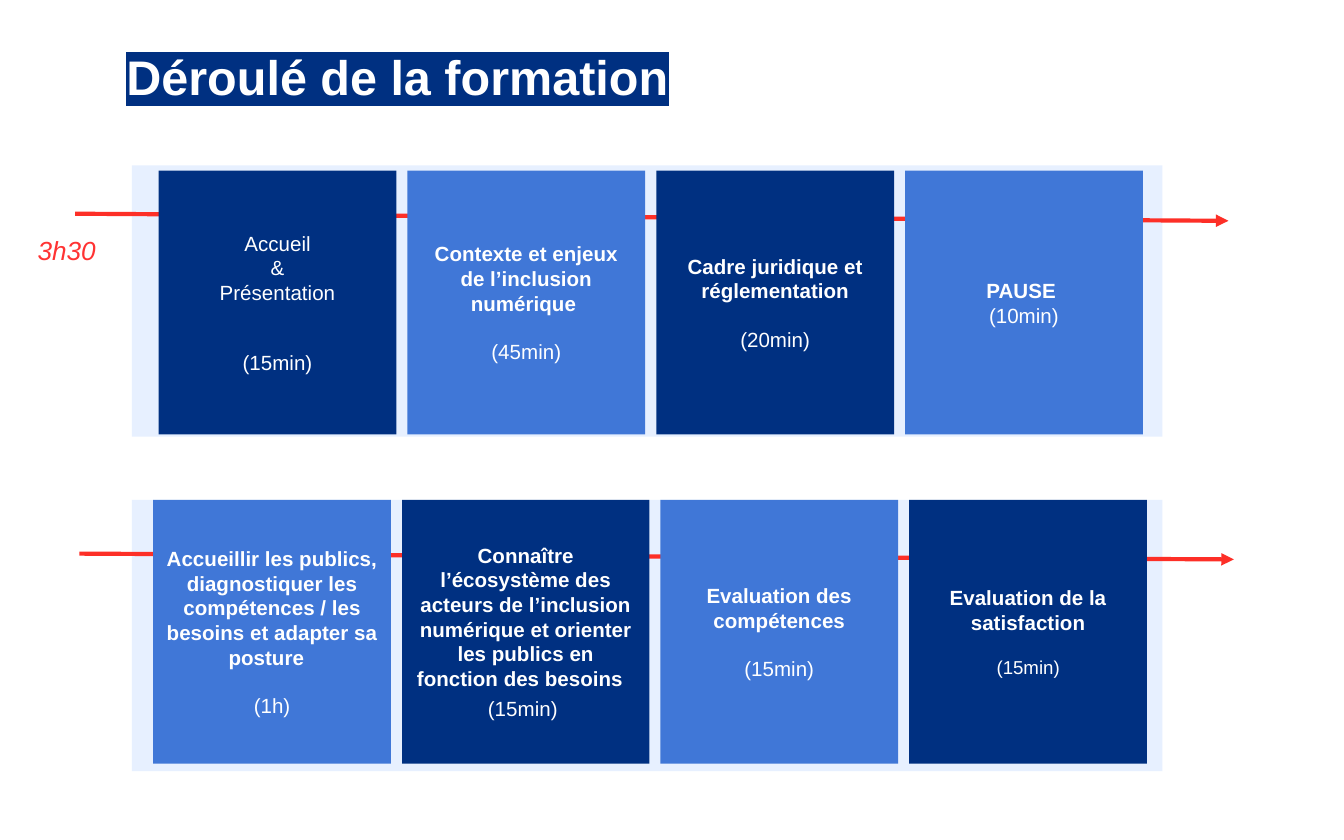
from lxml.etree import SubElement
from pptx import Presentation
from pptx.dml.color import RGBColor as RGB
from pptx.enum.shapes import MSO_CONNECTOR as CONN, MSO_SHAPE as SHAPE
from pptx.enum.text import MSO_ANCHOR as ANCHOR, PP_ALIGN as ALIGN
from pptx.oxml.ns import qn
from pptx.util import Pt

COLORS = {
    "navy": "003081",
    "blue": "4077D7",
    "pale": "E7F0FF",
    "red": "FD2F27",
    "time": "FF3333",
    "white": "FFFFFF",
}
LINE = 12.65


def rgb(name):
    return RGB.from_string(COLORS[name])


def add_text(tf, text, first=False, size=11, color="white", bold=False,
             italic=False, align=ALIGN.LEFT, before=0, highlight=None):
    p = tf.paragraphs[0] if first else tf.add_paragraph()
    p.alignment = align
    p.space_before = Pt(before)
    r = p.add_run()
    r.text = text
    r.font.size = Pt(size)
    r.font.bold = bold
    r.font.italic = italic
    r.font.color.rgb = rgb(color)
    if highlight:
        mark = SubElement(r.font._element, qn("a:highlight"))
        SubElement(mark, qn("a:srgbClr"), val=COLORS[highlight])
    r.font.name = "Arial"


class Deck:
    gap = 5.9
    box_height = 141.3

    def __init__(self, prs):
        self.s = prs.slides.add_slide(prs.slide_layouts[6])

    def frame(self, sp, inset):
        tf = sp.text_frame
        tf.word_wrap = True
        tf.margin_left = tf.margin_right = Pt(inset)
        tf.margin_top = tf.margin_bottom = Pt(inset)
        return tf

    def rect(self, x, y, w, h, fill):
        sp = self.s.shapes.add_shape(SHAPE.RECTANGLE, Pt(x), Pt(y), Pt(w), Pt(h))
        sp.shadow.inherit = False
        sp.fill.solid()
        sp.fill.fore_color.rgb = rgb(fill)
        sp.line.fill.background()
        return sp

    def label(self, x, y, w, h, text, inset, **style):
        sp = self.s.shapes.add_textbox(Pt(x), Pt(y), Pt(w), Pt(h))
        add_text(self.frame(sp, inset), text, first=True, **style)

    def arrow(self, x1, y1, x2, y2):
        c = self.s.shapes.add_connector(CONN.STRAIGHT, Pt(x1), Pt(y1), Pt(x2), Pt(y2))
        c.line.color.rgb = rgb("red")
        c.line.width = Pt(2.25)
        SubElement(c.line._get_or_add_ln(), qn("a:tailEnd"), type="triangle")
        SubElement(c._element.spPr, qn("a:effectLst"))

    def box(self, x, y, w, fill, lines):
        sp = self.rect(x, y, w, self.box_height, fill)
        tf = self.frame(sp, 7.2)
        tf.vertical_anchor = ANCHOR.MIDDLE
        for i, (text, style) in enumerate(lines):
            add_text(tf, text, first=i == 0, align=ALIGN.CENTER, **style)

    def row(self, x, y, fills, boxes):
        for i, (w, lines) in enumerate(boxes):
            self.box(x, y, w, fills[i % 2], lines)
            x += w + self.gap


def step(title, time, before=LINE, size=11, width=127.4):
    return width, [(title, {"bold": True}), (time, {"before": before, "size": size})]


MORNING = [
    (127.4, [("Accueil", {}), ("&", {}), ("Présentation", {}),
             ("(15min)", {"before": 24.15})]),
    step("Contexte et enjeux de l’inclusion numérique ", "(45min)"),
    step("Cadre juridique et réglementation", "(20min)"),
    step("PAUSE ", "(10min)", before=0),
]
SECOND = [
    step("Accueillir les publics, diagnostiquer les compétences / les besoins "
         "et adapter sa posture  ", "(1h)"),
    step("Connaître l’écosystème des acteurs de l’inclusion numérique et orienter "
         "les publics en fonction des besoins  ", "(15min) ", before=3, width=132.5),
    step("Evaluation des compétences", "(15min)"),
    step("Evaluation de la satisfaction", "(15min)", before=11.5, size=10),
]


def main():
    prs = Presentation()
    prs.slide_width, prs.slide_height = Pt(720), Pt(450)
    deck = Deck(prs)
    deck.label(64.8, 22.3, 505.4, 40.3, "Déroulé de la formation", 2.9,
               size=26, bold=True, highlight="navy")

    deck.rect(70.6, 88.6, 552.2, 145.4, "pale")
    deck.arrow(40.3, 114.5, 658.1, 118.3)
    deck.row(85, 91.4, ("navy", "blue"), MORNING)
    deck.label(13, 118.1, 113.8, 34.6, "3h30", 7.2, size=14, color="time", italic=True)

    deck.rect(70.6, 267.8, 552.2, 145.4, "pale")
    deck.arrow(42.5, 296.6, 661, 299.7)
    deck.row(82.1, 267.8, ("blue", "navy"), SECOND)
    prs.save("out.pptx")


if __name__ == "__main__":
    main()
